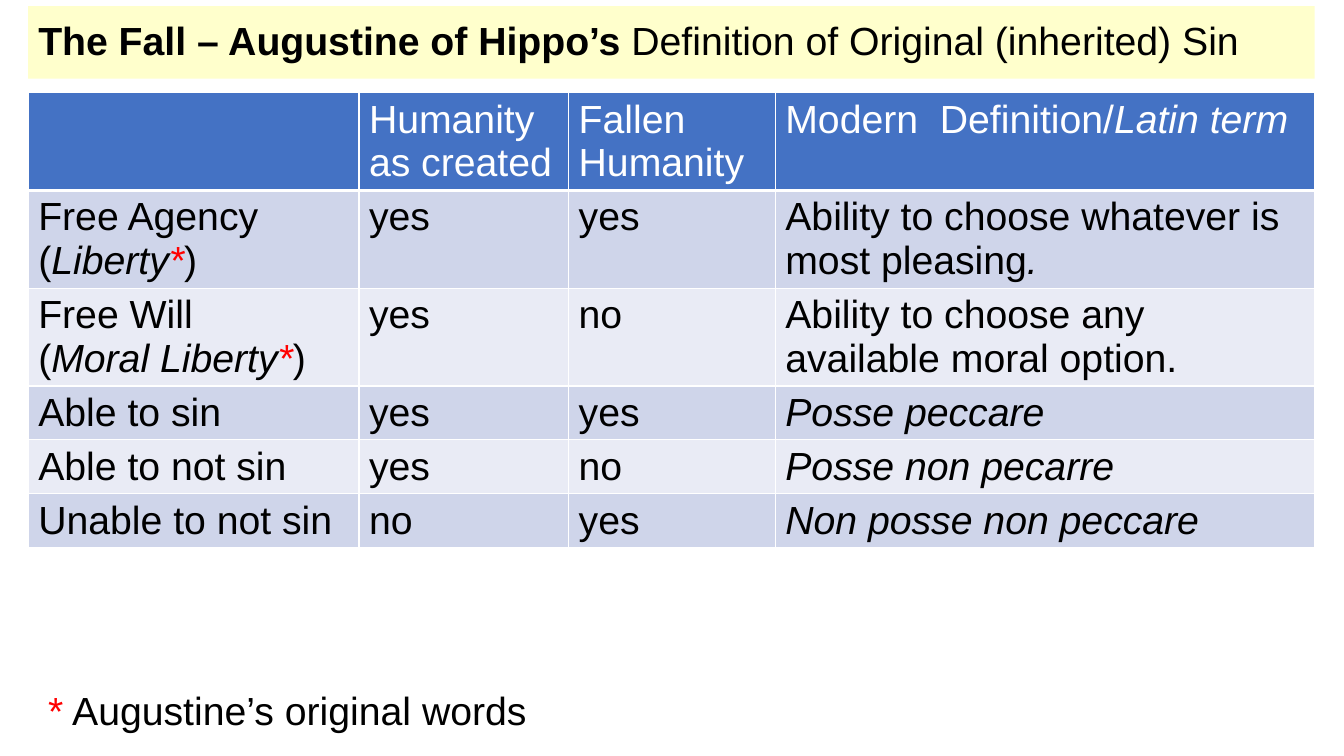
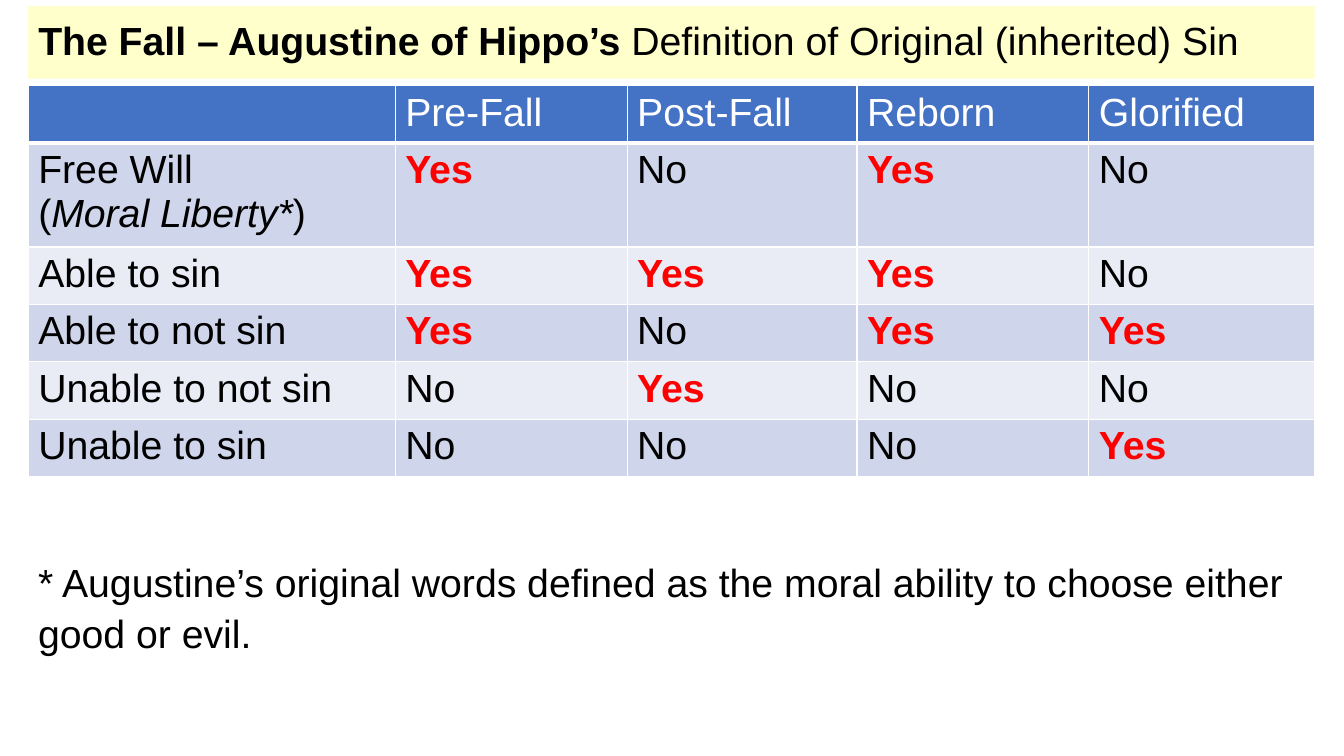
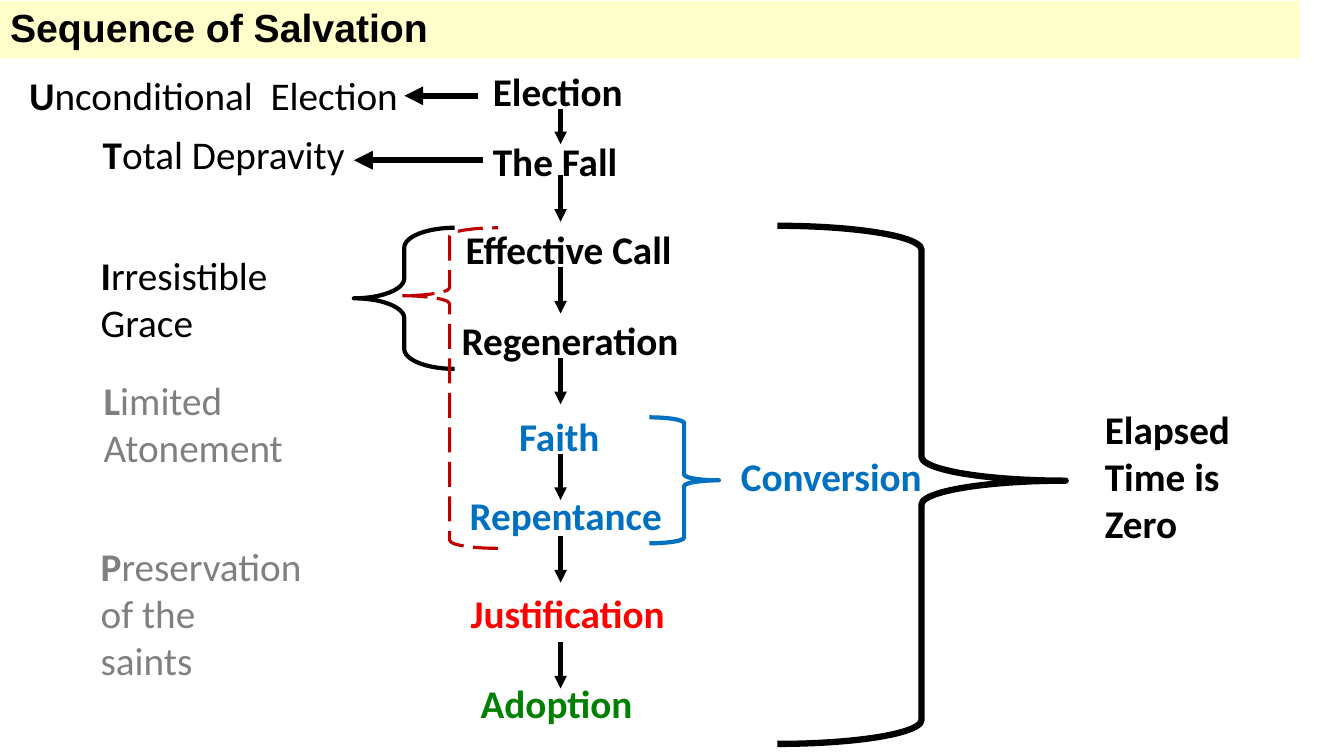
import pptx
import pptx.util
import pptx.dml.color
import pptx.enum.dml
import pptx.enum.shapes
import pptx.enum.text
import pptx.oxml.ns
import lxml.etree

Inches = pptx.util.Inches
Pt = pptx.util.Pt
qn = pptx.oxml.ns.qn
SHAPE = pptx.enum.shapes.MSO_SHAPE
FIT = pptx.enum.text.MSO_AUTO_SIZE

# Shared look
BLACK, WHITE, RED = "000000", "FFFFFF", "FF0000"
BLUE, GREEN, GREY, CRIMSON = "0070C0", "008000", "808080", "C00000"
BAND, HEAD = "FFFFCC", "4472C4"
STRIPES = ("CFD5EA", "E9EBF5")
SIZE = 28
TITLE = [("The Fall – Augustine of Hippo’s ", "b"),
         ("Definition of Original (inherited) Sin", "")]
TITLE_BOX = (0.28, 0.06, 12.76, 0.72)


def color(code):
    return pptx.dml.color.RGBColor.from_string(code)


def paint(target, code):
    target.fill.solid()
    target.fill.fore_color.rgb = color(code)


def place(box):
    return [Inches(round(v, 2)) for v in box]


def write(frame, paras, font="Arial", ink=BLACK, gap=None):
    """Each paragraph is a list of (text, flags): b bold, i italic, r red."""
    for n, runs in enumerate(paras):
        para = frame.add_paragraph() if n else frame.paragraphs[0]
        para.alignment = pptx.enum.text.PP_ALIGN.LEFT
        if gap:
            para.line_spacing = gap
        for text, flags in runs:
            run = para.add_run()
            run.text = text
            run.font.name = font
            run.font.size = Pt(SIZE)
            run.font.bold = "b" in flags
            run.font.italic = "i" in flags
            run.font.color.rgb = color(RED if "r" in flags else ink)


def label(slide, box, paras, wrap=True, **style):
    frame = slide.shapes.add_textbox(*place(box)).text_frame
    frame.word_wrap = wrap
    frame.auto_size = FIT.SHAPE_TO_FIT_TEXT
    write(frame, paras, **style)


def start(deck, box, runs):
    """New slide with its title on a pale yellow band."""
    slide = deck.slides.add_slide(deck.slide_layouts[5])
    title = slide.shapes.title
    title.left, title.top, title.width, title.height = place(box)
    paint(title, BAND)
    frame = title.text_frame
    frame.word_wrap = True
    frame.auto_size = FIT.NONE
    frame.vertical_anchor = pptx.enum.text.MSO_ANCHOR.MIDDLE
    write(frame, [runs], gap=0.9)
    return slide


# Tables
def edge(cell, base):
    props = cell._tc.get_or_add_tcPr()
    for side, width in (("L", 1), ("R", 1), ("T", 1), ("B", base)):
        line = lxml.etree.SubElement(props, qn("a:ln" + side), w=str(Pt(width)))
        fill = lxml.etree.SubElement(line, qn("a:solidFill"))
        lxml.etree.SubElement(fill, qn("a:srgbClr"), val=WHITE)


def grid(slide, left, top, cols, rows, data):
    box = place((left, top, sum(cols), sum(rows)))
    table = slide.shapes.add_table(len(rows), len(cols), *box).table
    for col, width in zip(table.columns, cols):
        col.width = Inches(width)
    for r, (row, height) in enumerate(zip(data, rows)):
        table.rows[r].height = Inches(height)
        for c, item in enumerate(row):
            cell = table.cell(r, c)
            edge(cell, 1 if r else 3)
            paint(cell, STRIPES[(r - 1) % 2] if r else HEAD)
            if item:
                paras = [[(item, "")]] if isinstance(item, str) else item
                write(cell.text_frame, paras, ink=BLACK if r else WHITE)


def term(name, latin):
    return [[(name, "")], [("(", ""), (latin, "i"), ("*", "ir"), (")", "")]]


def fall(deck):
    slide = start(deck, TITLE_BOX, TITLE)
    data = [
        ["", "Humanity as created", "Fallen Humanity",
         [[("Modern  Definition/", ""), ("Latin term", "i")]]],
        [term("Free Agency", "Liberty"), "yes", "yes",
         [[("Ability to choose whatever is most pleasing", ""), (".", "i")]]],
        [term("Free Will", "Moral Liberty"), "yes", "no",
         "Ability to choose any available moral option."],
        ["Able to sin", "yes", "yes", [[("Posse peccare", "i")]]],
        ["Able to not sin", "yes", "no", [[("Posse non pecarre", "i")]]],
        ["Unable to not sin", "no", "yes", [[("Non posse non peccare", "i")]]],
    ]
    grid(slide, 0.28, 0.92, (3.28, 2.08, 2.05, 5.35),
         [0.97] * 3 + [0.53] * 3, data)
    label(slide, (0.38, 6.72, 5.01, 0.57),
          [[("*", "r"), (" Augustine’s original words", "")]],
          wrap=False, gap=1.08)


def states(deck):
    slide = start(deck, TITLE_BOX, TITLE)
    will = [[("Free Will", "")],
            [("(", ""), ("Moral Liberty*", "i"), (")", "")]]
    marks = [(will, "YNYN"), ("Able to sin", "YYYN"),
             ("Able to not sin", "YNYY"), ("Unable to not sin", "NYNN"),
             ("Unable to sin", "NNNY")]
    words = {"Y": [[("Yes", "br")]], "N": "No"}
    data = [["", "Pre-Fall", "Post-Fall", "Reborn", "Glorified"]]
    data += [[name] + [words[m] for m in row] for name, row in marks]
    grid(slide, 0.28, 0.85, (3.64, 2.3, 2.28, 2.3, 2.24),
         [0.57, 1.03] + [0.57] * 4, data)
    label(slide, (0.28, 5.45, 12.68, 1.04),
          [[("* Augustine’s original words defined as the moral ability "
             "to choose either good or evil.", "")]], gap=1.08)


# Sequence diagram
def arrow(slide, x1, y1, x2, y2, width=3):
    kind = pptx.enum.shapes.MSO_CONNECTOR.STRAIGHT
    link = slide.shapes.add_connector(kind, *place((x1, y1, x2, y2)))
    link.line.width = Pt(width)
    link.line.color.rgb = color(BLACK)
    props = link.element.spPr
    lxml.etree.SubElement(props.find(qn("a:ln")), qn("a:tailEnd"),
                          type="triangle")
    lxml.etree.SubElement(props, qn("a:effectLst"))


def brace(slide, kind, box, ink, width, bend=0.083, mid=0.5):
    shape = slide.shapes.add_shape(kind, *place(box))
    shape.shadow.inherit = False
    shape.fill.background()
    shape.line.color.rgb = color(ink)
    shape.line.width = Pt(width)
    shape.adjustments[0] = bend
    shape.adjustments[1] = mid
    return shape


def spans(slide, left, top):
    """Braces and the words they point to."""
    brace(slide, SHAPE.LEFT_BRACE, (left, top + 0.02, 1, 1.4),
          BLACK, 3, 0.197)
    brace(slide, SHAPE.RIGHT_BRACE, (left + 2.93, top + 1.9, 0.69, 1.25),
          BLUE, 3)
    brace(slide, SHAPE.RIGHT_BRACE, (left + 4.2, top, 2.86, 5.14),
          BLACK, 4.5, mid=0.492)
    dash = brace(slide, SHAPE.LEFT_BRACE, (left + 0.47, top + 0.02, 0.96, 3.18),
                 CRIMSON, 2.25, mid=0.212)
    dash.line.dash_style = pptx.enum.dml.MSO_LINE.LONG_DASH
    label(slide, (left + 3.74, top + 2.2, 2.15, 0.57),
          [[("Conversion", "b")]], font="Calibri", ink=BLUE)
    label(slide, (left + 7.35, top + 1.73, 2.03, 1.51),
          [[("Elapsed Time is Zero", "b")]], font="Calibri")


def steps(slide, left, top):
    """Steps from top to bottom, with an arrow after each but the last."""
    chain = [
        ("Election", 0.31, 0, BLACK), ("The Fall", 0.31, 0.69, BLACK),
        ("Effective Call", 0.04, 1.57, BLACK),
        ("Regeneration", 0, 2.47, BLACK), ("Faith", 0.57, 3.42, BLUE),
        ("Repentance", 0.08, 4.21, BLUE),
        ("Justification", 0.09, 5.18, RED), ("Adoption", 0.19, 6.07, GREEN),
    ]
    for name, x, y, ink in chain:
        label(slide, (left + x, top + y, 2.54, 0.57), [[(name, "b")]],
              font="Calibri", ink=ink)
    for y in (0.46, 1.12, 2.03, 2.93, 3.88, 4.7, 5.75):
        size = 0.35 if y == 0.46 else 0.46
        arrow(slide, left + 1.08, top + y, left + 1.08, top + y + size)


def points(slide, left, top):
    """Five points, each with a bold initial; arrows lead to two of them."""
    items = [
        (0, 0, 4, BLACK, ["Unconditional  Election"]),
        (0.73, 0.58, 2.78, BLACK, ["Total Depravity"]),
        (0.71, 1.78, 2.28, BLACK, ["Irresistible Grace"]),
        (0.74, 3.02, 2.28, GREY, ["Limited Atonement"]),
        (0.71, 4.67, 2.28, GREY, ["Preservation", "of the", "saints"]),
    ]
    for x, y, width, ink, lines in items:
        first, *rest = lines
        paras = [[(first[0], "b"), (first[1:], "")]]
        paras += [[(line, "")] for line in rest]
        label(slide, (left + x, top + y, width, 0.1 + 0.47 * len(lines)),
              paras, font="Calibri", ink=ink)
    for x1, x2, y in ((4.55, 3.82, 0.29), (4.6, 3.32, 0.93)):
        arrow(slide, left + x1, top + y, left + x2, top + y, 4.5)


def order(deck):
    slide = start(deck, (0, 0.01, 12.89, 0.57),
                  [("Sequence of Salvation", "b")])
    spans(slide, 3.51, 2.24)
    steps(slide, 4.48, 0.62)
    points(slide, 0.19, 0.66)


def main():
    deck = pptx.Presentation()
    deck.slide_width, deck.slide_height = Inches(13.33), Inches(7.5)
    fall(deck)
    states(deck)
    order(deck)
    deck.save("out.pptx")


if __name__ == "__main__":
    main()
